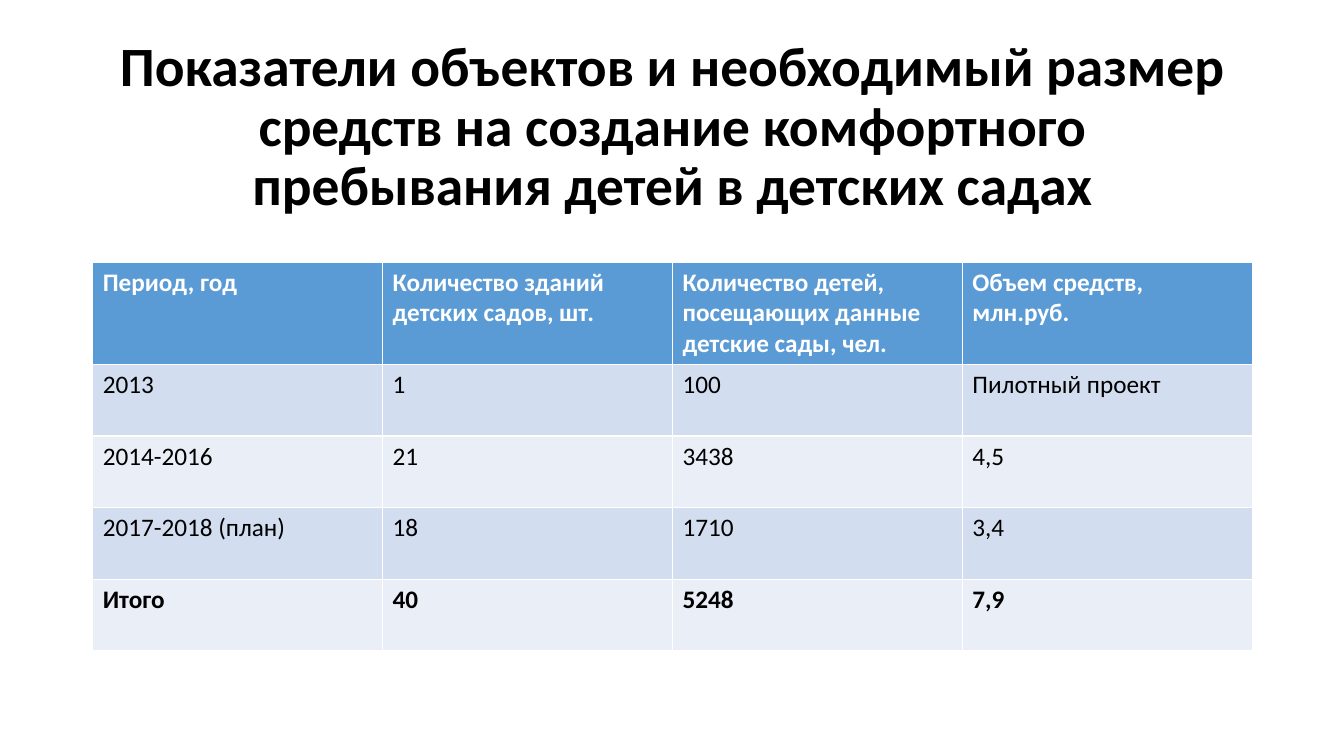
import pptx
import pptx.util
import pptx.dml.color
import pptx.enum.text
from pptx.util import Inches

TITLE = "Показатели объектов и необходимый размер средств на создание комфортного пребывания детей в детских садах"
ROWS = [
    ("Период, год", "Количество зданий детских садов, шт.",
     "Количество детей, посещающих данные детские сады, чел.", "Объем средств, млн.руб."),
    ("2013", "1", "100", "Пилотный проект"),
    ("2014-2016", "21", "3438", "4,5"),
    ("2017-2018 (план)", "18", "1710", "3,4"),
    ("Итого", "40", "5248", "7,9"),
]
HEADER_FILL = "5B9BD5"
BAND_FILLS = ("EAEFF7", "D2DEEF")
LEFT, WIDTH = 0.92, 11.5
TITLE_TOP, TITLE_HEIGHT = 0.4, 1.74
TABLE_TOP, HEADER_HEIGHT, ROW_HEIGHT = 2.6, 1.01, 0.71


def color(value):
    return pptx.dml.color.RGBColor.from_string(value)


def apply(target, values):
    for name, value in values.items():
        setattr(target, name, value)


def write(frame, text, size, ink, bold):
    para = frame.paragraphs[0]
    span = para.add_run()
    span.text = text
    apply(span.font, {"name": "Calibri", "size": pptx.util.Pt(size), "bold": bold})
    span.font.color.rgb = color(ink)
    return para


def add_title(page):
    title = page.shapes.title
    apply(title, {"left": Inches(LEFT), "top": Inches(TITLE_TOP),
                  "width": Inches(WIDTH), "height": Inches(TITLE_HEIGHT)})
    apply(title.text_frame, {"word_wrap": True,
                             "auto_size": pptx.enum.text.MSO_AUTO_SIZE.NONE,
                             "vertical_anchor": pptx.enum.text.MSO_ANCHOR.MIDDLE})
    para = write(title.text_frame, TITLE, 39.6, "000000", True)
    apply(para, {"alignment": pptx.enum.text.PP_ALIGN.CENTER, "line_spacing": 0.9})


def add_funding_table(page):
    heights = [HEADER_HEIGHT] + [ROW_HEIGHT] * (len(ROWS) - 1)
    table = page.shapes.add_table(
        len(ROWS), len(ROWS[0]), Inches(LEFT), Inches(TABLE_TOP),
        Inches(WIDTH), Inches(sum(heights))).table
    for index, (texts, height) in enumerate(zip(ROWS, heights)):
        table.rows[index].height = Inches(height)
        header = index == 0
        bold = header or index == len(ROWS) - 1
        for column, text in enumerate(texts):
            cell = table.cell(index, column)
            cell.fill.solid()
            cell.fill.fore_color.rgb = color(HEADER_FILL if header else BAND_FILLS[index % 2])
            write(cell.text_frame, text, 18, "FFFFFF" if header else "000000", bold)


def main():
    deck = pptx.Presentation()
    apply(deck, {"slide_width": Inches(13.33), "slide_height": Inches(7.5)})
    page = deck.slides.add_slide(deck.slide_layouts[5])
    add_title(page)
    add_funding_table(page)
    deck.save("out.pptx")


if __name__ == "__main__":
    main()
